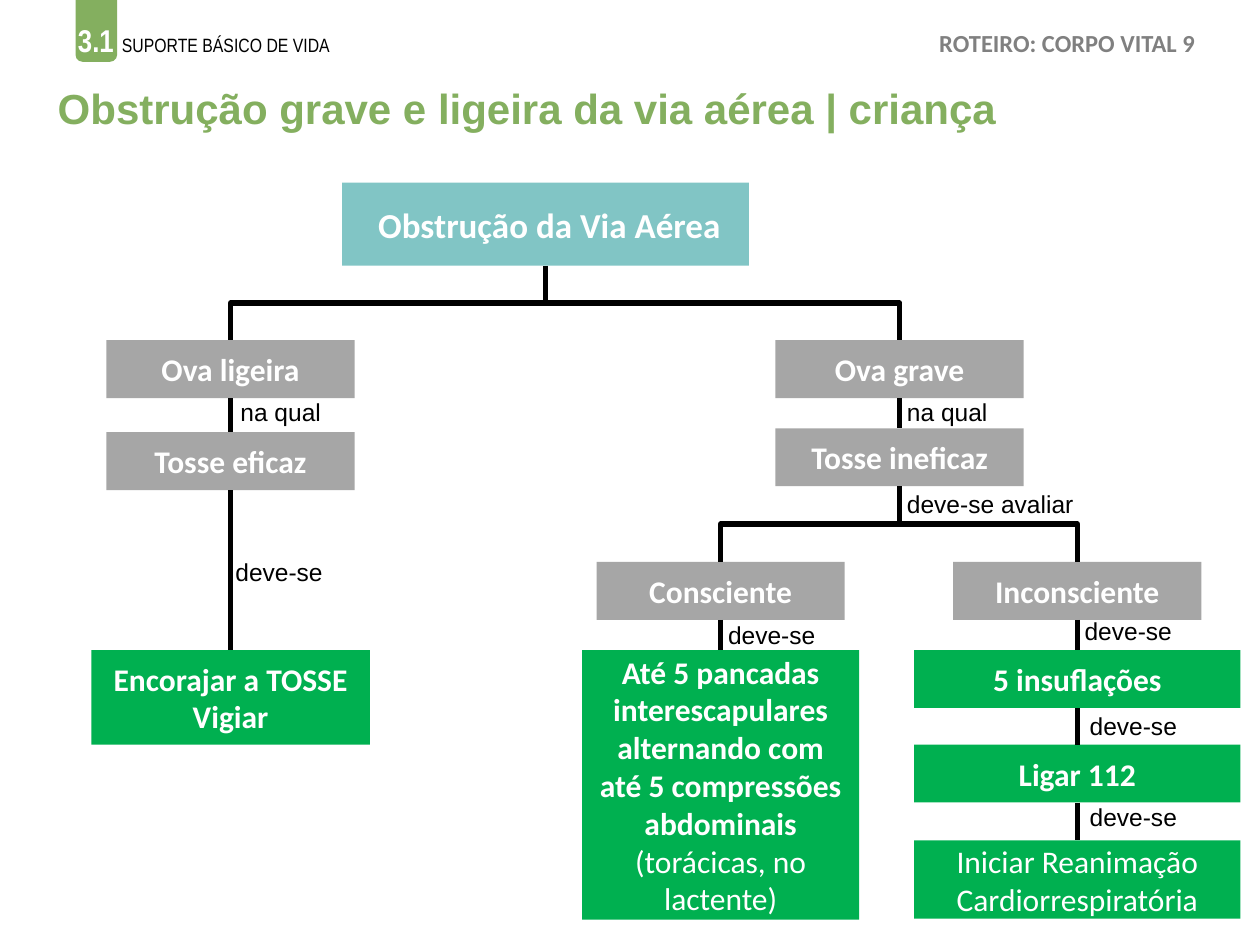
from lxml.etree import SubElement
from pptx import Presentation
from pptx.dml.color import RGBColor
from pptx.enum.shapes import MSO_CONNECTOR, MSO_SHAPE
from pptx.enum.text import MSO_ANCHOR, PP_ALIGN
from pptx.oxml.ns import qn
from pptx.util import Inches, Pt

GREEN, TEAL, GRAY, ACTION = "84AF5F", "81C5C5", "A6A6A6", "00B050"
WHITE, BLACK = "FFFFFF", "000000"
LABEL = {"name": "Arial", "size": Pt(14), "color": BLACK}
STEP = {"name": "Calibri", "size": Pt(18), "color": WHITE, "bold": True}
PLAIN = {**STEP, "bold": False}
ROOT = {**STEP, "size": Pt(20)}
TITLE = {"name": "Arial", "size": Pt(24), "color": GREEN, "bold": True}
HEADING = {"name": "Calibri", "size": Pt(14), "color": "808080", "bold": True}
NUMBER = {"name": "Arial Narrow", "size": Pt(18), "color": WHITE, "bold": True}
SPACER = {**NUMBER, "size": Pt(20), "color": "AFC439"}
SECTION = {**NUMBER, "size": Pt(11), "color": BLACK, "bold": False}

LEFT, CENTER, RIGHT, AWAKE, UNAWARE = 1.83, 4.33, 7.14, 5.72, 8.55
SMALL = (1.97, 0.46)
WIDE = 2.59
BOXES = {
    "root": (CENTER, 1.45, 3.23, 0.66, TEAL, [(" Obstrução da Via Aérea", ROOT)]),
    "mild": (LEFT, 2.7, *SMALL, GRAY, [("Ova ligeira", STEP)]),
    "cough": (LEFT, 3.43, *SMALL, GRAY, [("Tosse eficaz", STEP)]),
    "encourage": (LEFT, 5.16, 2.21, 0.75, ACTION, [("Encorajar a TOSSE Vigiar", STEP)]),
    "severe": (RIGHT, 2.7, *SMALL, GRAY, [("Ova grave", STEP)]),
    "weak_cough": (RIGHT, 3.4, *SMALL, GRAY, [("Tosse ineficaz", STEP)]),
    "conscious": (AWAKE, 4.46, *SMALL, GRAY, [("Consciente", STEP)]),
    "unconscious": (UNAWARE, 4.46, *SMALL, GRAY, [("Inconsciente", STEP)]),
    "blows": (AWAKE, 5.16, 2.2, 2.14, ACTION, [
        ("Até 5 pancadas interescapulares alternando com até 5 compressões abdominais ", STEP),
        ("(torácicas, no lactente)", PLAIN)]),
    "breaths": (UNAWARE, 5.16, WIDE, 0.46, ACTION, [("5 insuflações", STEP)]),
    "call": (UNAWARE, 5.91, WIDE, 0.46, ACTION, [("Ligar 112", STEP)]),
    "cpr": (UNAWARE, 6.67, WIDE, 0.62, ACTION, [
        ("Iniciar Reanimação Cardiorrespiratória", PLAIN)]),
}
LINKS = [
    ("root", "mild"), ("root", "severe"), ("mild", "cough"), ("cough", "encourage"),
    ("severe", "weak_cough"), ("weak_cough", "conscious"), ("weak_cough", "unconscious"),
    ("conscious", "blows"), ("unconscious", "breaths"), ("breaths", "call"), ("call", "cpr"),
]
LABELS = [
    ("na qual", 1.81, 3.1, 0.94), ("na qual", 7.1, 3.1, 0.94),
    ("deve-se avaliar", 7.1, 3.83, 1.6), ("deve-se", 1.77, 4.37, 0.94),
    ("deve-se", 5.68, 4.87, 0.94), ("deve-se", 8.51, 4.84, 0.94),
    ("deve-se", 8.55, 5.59, 0.94), ("deve-se", 8.55, 6.32, 0.94),
]


def rgb(color):
    return RGBColor.from_string(color)


def write(sp, runs, align=PP_ALIGN.LEFT, anchor=MSO_ANCHOR.TOP):
    tf = sp.text_frame
    tf.word_wrap = True
    tf.vertical_anchor = anchor
    p = tf.paragraphs[0]
    p.alignment = align
    for text, style in runs:
        r = p.add_run()
        r.text = text
        for key, value in style.items():
            if key == "color":
                r.font.color.rgb = rgb(value)
            else:
                setattr(r.font, key, value)
    return p


def add_text(s, x, y, w, h, runs, **layout):
    sp = s.shapes.add_textbox(Inches(x), Inches(y), Inches(w), Inches(h))
    return write(sp, runs, **layout)


def add_block(s, kind, x, y, w, h, fill):
    sp = s.shapes.add_shape(kind, Inches(x), Inches(y), Inches(w), Inches(h))
    sp.shadow.inherit = False
    sp.fill.solid()
    sp.fill.fore_color.rgb = rgb(fill)
    sp.line.fill.background()
    return sp


def add_box(s, cx, y, w, h, fill, runs):
    sp = add_block(s, MSO_SHAPE.RECTANGLE, cx - w / 2, y, w, h, fill)
    write(sp, runs, PP_ALIGN.CENTER, MSO_ANCHOR.MIDDLE)
    return sp


def turn_elbow(line, x1, y1, x2, y2):
    run, drop = abs(x2 - x1), y2 - y1
    line.left, line.top = (x1 + x2 - drop) // 2, (y1 + y2 - run) // 2
    line.width, line.height = drop, run
    xfrm = line._element.spPr.find(qn("a:xfrm"))
    xfrm.set("rot", "16200000" if x2 > x1 else "5400000")
    xfrm.set("flipH", "1" if x2 > x1 else "0")
    xfrm.set("flipV", "0")


def add_link(s, upper, lower):
    x1, y1 = upper.left + upper.width // 2, upper.top + upper.height
    x2, y2 = lower.left + lower.width // 2, lower.top
    bent = abs(x2 - x1) > Inches(0.1)
    kind = MSO_CONNECTOR.ELBOW if bent else MSO_CONNECTOR.STRAIGHT
    line = s.shapes.add_connector(kind, x1, y1, x2, y2)
    line.begin_connect(upper, 2)
    line.end_connect(lower, 0)
    if bent:
        turn_elbow(line, x1, y1, x2, y2)
    line.line.color.rgb = rgb(BLACK)
    line.line.width = Pt(3)
    SubElement(line._element.spPr, qn("a:effectLst"))


def add_header(s):
    add_block(s, MSO_SHAPE.ROUNDED_RECTANGLE, 0.6, -0.13, 0.33, 0.62, GREEN)
    add_text(s, 0.52, 0.09, 7.15, 0.44,
             [("3.1", NUMBER), (" ", SPACER), ("SUPORTE BÁSICO DE VIDA", SECTION)])
    add_text(s, 7.18, 0.17, 2.58, 0.34, [("ROTEIRO: CORPO VITAL 9", HEADING)],
             align=PP_ALIGN.CENTER)
    p = add_text(s, 0.36, 0.57, 9.29, 0.62,
                 [("Obstrução grave e ligeira da via aérea | criança", TITLE)],
                 anchor=MSO_ANCHOR.MIDDLE)
    p.line_spacing = 0.9


def main():
    prs = Presentation()
    prs.slide_width, prs.slide_height = Inches(10), Inches(7.5)
    s = prs.slides.add_slide(prs.slide_layouts[6])
    add_header(s)
    boxes = {name: add_box(s, *box) for name, box in BOXES.items()}
    for upper, lower in LINKS:
        add_link(s, boxes[upper], boxes[lower])
    for text, x, y, w in LABELS:
        add_text(s, x, y, w, 0.34, [(text, LABEL)])
    prs.save("out.pptx")


if __name__ == "__main__":
    main()
